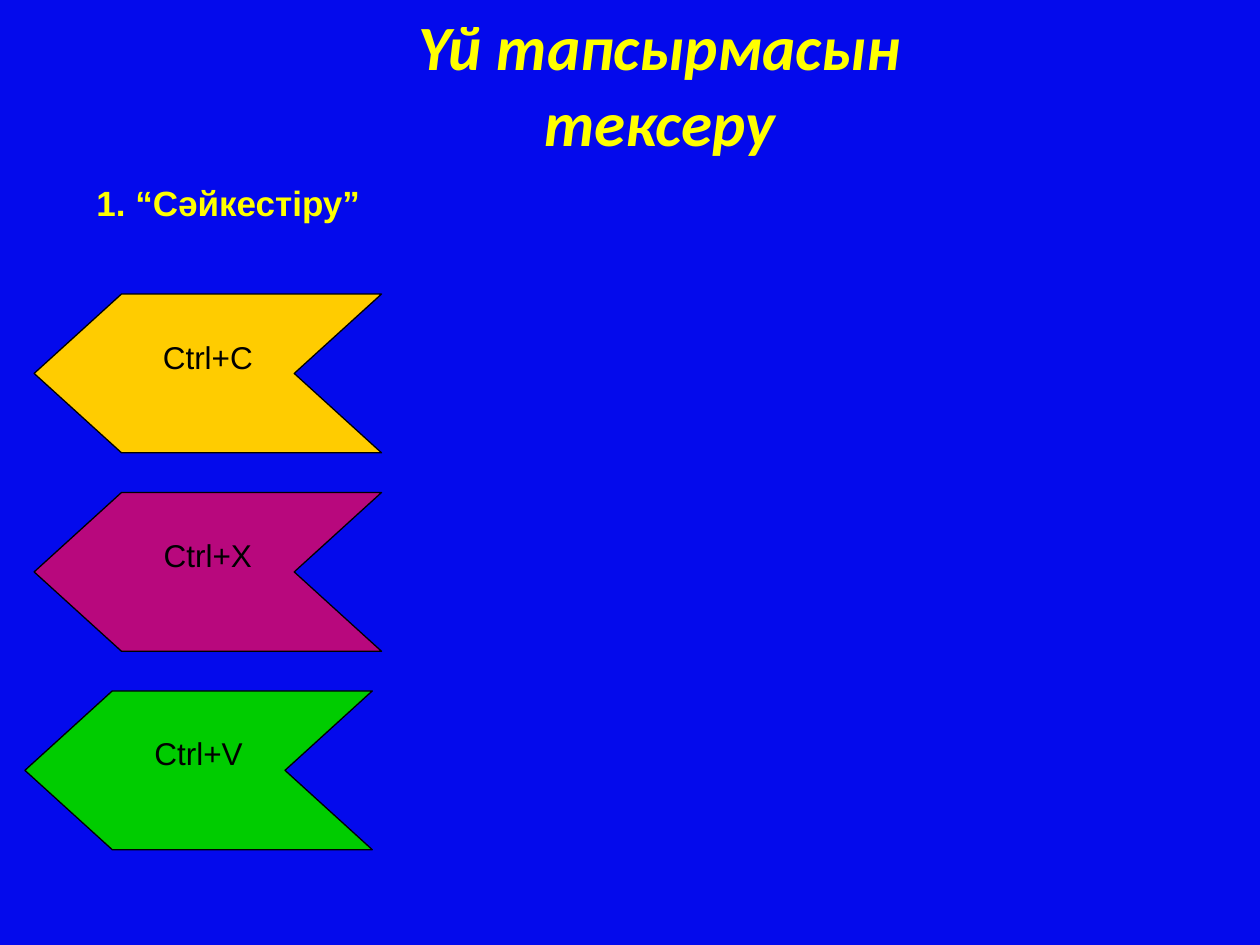
from pptx import Presentation
from pptx.dml.color import RGBColor
from pptx.enum import shapes, text
from pptx.util import Pt

YELLOW = "FFFF00"
BLACK = "000000"
ARROWS = [
    ("Ctrl+C", "FFCC00", 19.5),
    ("Ctrl+X", "B8087D", 19.5),
    ("Ctrl+V", "00CC00", 14.25),
]


def paint(fill, color):
    fill.solid()
    fill.fore_color.rgb = RGBColor.from_string(color)


def add_run(p, words, size, color, font="Arial", bold=False, italic=False):
    r = p.add_run()
    r.text = words
    r.font.name = font
    r.font.size = Pt(size)
    r.font.bold = bold
    r.font.italic = italic
    paint(r.font.fill, color)


def add_box(s, left, top, width, height):
    sp = s.shapes.add_textbox(Pt(left), Pt(top), Pt(width), Pt(height))
    tf = sp.text_frame
    tf.word_wrap = True
    return tf


def add_title(s, left, top, width, height):
    tf = add_box(s, left, top, width, height)
    for i, line in enumerate(["Үй тапсырмасын", "тексеру"]):
        p = tf.add_paragraph() if i else tf.paragraphs[0]
        p.alignment = text.PP_ALIGN.CENTER
        add_run(p, line, 36, YELLOW, "Calibri", True, True)


def add_task(s, left, top, width, height):
    p = add_box(s, left, top, width, height).paragraphs[0]
    add_run(p, "1. “Сәйкестіру”", 20, YELLOW, bold=True)


def add_arrow(s, left, top, width, height, label, color):
    sp = s.shapes.add_shape(shapes.MSO_SHAPE.CHEVRON,
                            Pt(left), Pt(top), Pt(width), Pt(height))
    sp.adjustments[0] = 0.55
    sp.rotation = 180
    sp.shadow.inherit = False
    paint(sp.fill, color)
    paint(sp.line.fill, BLACK)
    sp.line.width = Pt(0.75)
    tf = sp.text_frame
    tf.word_wrap = False
    tf.vertical_anchor = text.MSO_ANCHOR.MIDDLE
    tf.margin_bottom = Pt(23)
    sp.element.txBody.bodyPr.set("rot", "10800000")
    p = tf.paragraphs[0]
    p.alignment = text.PP_ALIGN.CENTER
    add_run(p, label, 18, BLACK)


def add_arrows(s, left, top, width, height, step):
    for i, (label, color, x) in enumerate(ARROWS):
        add_arrow(s, left + x, top + i * step, width, height, label, color)


def main():
    prs = Presentation()
    prs.slide_width, prs.slide_height = Pt(720), Pt(540)
    s = prs.slides.add_slide(prs.slide_layouts[6])
    paint(s.background.fill, "040AEC")
    add_title(s, 167, 0.75, 420, 94)
    add_task(s, 48, 100, 641, 31)
    add_arrows(s, 0, 168, 198.5, 90.75, 113.4)
    prs.save("out.pptx")


if __name__ == "__main__":
    main()
